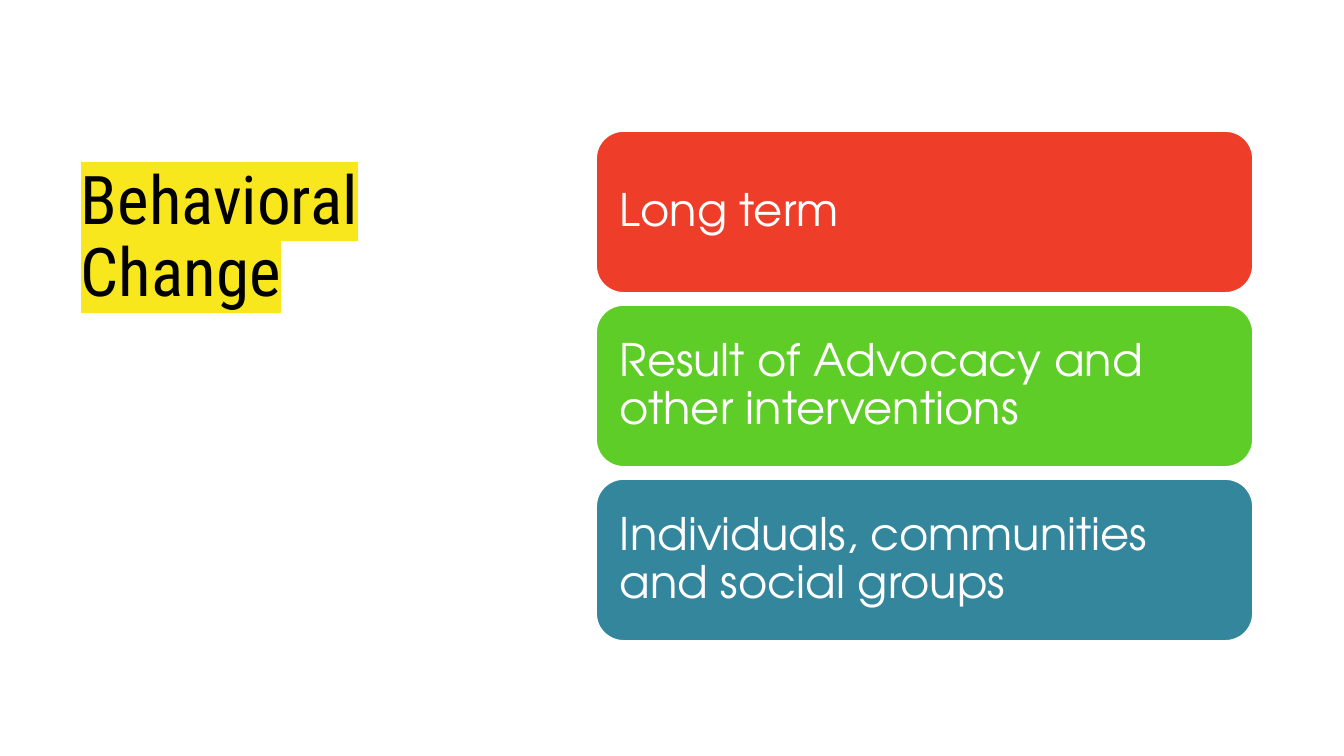
import pptx
import pptx.dml.color
import pptx.enum.shapes
import pptx.enum.text
import pptx.oxml
import pptx.oxml.ns
import pptx.util

PX = 914400 / 134.4


def px(n):
    return pptx.util.Emu(round(n * PX))


def color(value):
    return pptx.dml.color.RGBColor.from_string(value)


def write(tf, text, font, size, fill, highlight=None, spacing=0.9):
    p = tf.paragraphs[0]
    p.line_spacing = spacing
    r = p.add_run()
    r.text = text
    r.font.size = pptx.util.Pt(size)
    r.font.color.rgb = color(fill)
    if highlight:
        r.font._element.append(pptx.oxml.parse_xml(
            f'<a:highlight {pptx.oxml.ns.nsdecls("a")}>'
            f'<a:srgbClr val="{highlight}"/></a:highlight>'))
    r.font.name = font


class Deck:
    title_font = "Roboto Condensed"
    body_font = "TeX Gyre Adventor"
    white = "FFFFFF"

    def __init__(self, width, height):
        self.prs = pptx.Presentation()
        self.prs.slide_width = px(width)
        self.prs.slide_height = px(height)
        self.slide = self.prs.slides.add_slide(self.prs.slide_layouts[6])

    def text(self, x, y, w, h, text, inset, anchor, **style):
        sp = self.slide.shapes.add_textbox(px(x), px(y), px(w), px(h))
        tf = sp.text_frame
        tf.word_wrap = True
        tf.vertical_anchor = anchor
        tf.margin_left = tf.margin_right = px(inset[0])
        tf.margin_top = tf.margin_bottom = px(inset[1])
        write(tf, text, **style)

    def title(self, x, y, w, h, text):
        self.text(x, y, w, h, text, (10, 5), pptx.enum.text.MSO_ANCHOR.TOP,
                  font=self.title_font, size=36, fill="000000", highlight="F8E71C")

    def card(self, x, y, w, h, text, fill):
        sp = self.slide.shapes.add_shape(
            pptx.enum.shapes.MSO_SHAPE.ROUNDED_RECTANGLE, px(x), px(y), px(w), px(h))
        sp.shadow.inherit = False
        sp.adjustments[0] = 0.17
        sp.fill.solid()
        sp.fill.fore_color.rgb = color(fill)
        sp.line.color.rgb = color(self.white)
        sp.line.width = pptx.util.Pt(1)
        pad = 8
        self.text(x + pad, y + pad, w - 2 * pad, h - 2 * pad, text, (16, 16),
                  pptx.enum.text.MSO_ANCHOR.MIDDLE,
                  font=self.body_font, size=24, fill=self.white)


def main():
    deck = Deck(1344, 756)
    cards = [
        ("Long term", "EE3E2A"),
        ("Result of Advocacy and other interventions", "5FCD27"),
        ("Individuals, communities and social groups", "34869D"),
    ]
    height, gap = 162, 12
    for i, (text, fill) in enumerate(cards):
        deck.card(596, 131 + i * (height + gap), 657, height, text, fill)
    deck.title(71, 161, 418, 297, "Behavioral Change")
    deck.prs.save("out.pptx")


if __name__ == "__main__":
    main()
